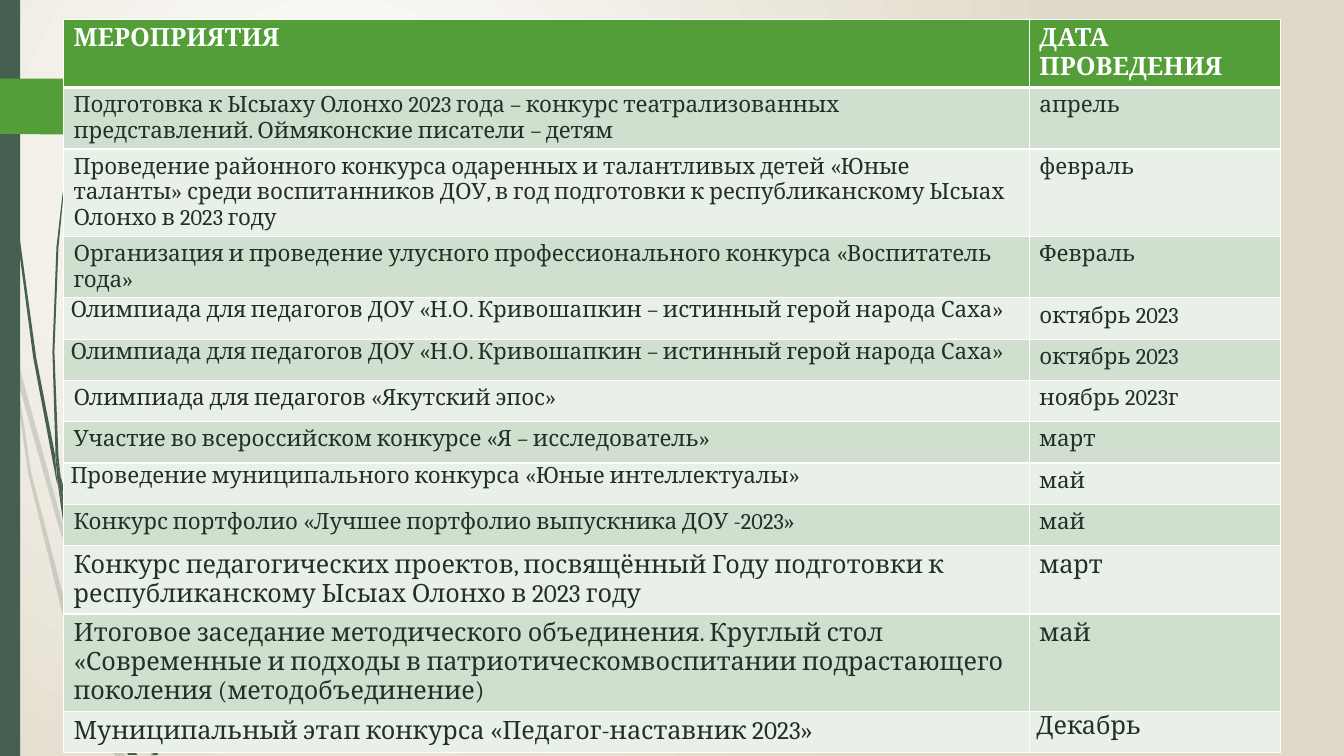
import pptx
import pptx.dml.color
import pptx.enum.text
import pptx.enum.shapes
import pptx.oxml
import pptx.oxml.ns
import pptx.util
from pptx.util import Inches

THEME = {
    "font": "Cambria", "large": 18, "small": 16, "text": "223028",
    "white": "FFFFFF", "sand": "E0D9C8", "pine": "455F51", "green": "549E39",
    "bands": ("D1DFCE", "E9F0E8"), "pale_alpha": 20,
}

HEADINGS = ("МЕРОПРИЯТИЯ", "ДАТА ПРОВЕДЕНИЯ")
EVENTS = [
    ("Подготовка к Ысыаху Олонхо 2023 года – конкурс театрализованных представлений. "
     "Оймяконские писатели – детям", "апрель"),
    ("Проведение районного конкурса одаренных и талантливых детей «Юные таланты» среди "
     "воспитанников ДОУ, в год подготовки к республиканскому Ысыах Олонхо в 2023 году", "февраль"),
    ("Организация и проведение улусного профессионального конкурса «Воспитатель года»", "Февраль"),
    ("Олимпиада для педагогов ДОУ «Н.О. Кривошапкин – истинный герой народа Саха»", "октябрь 2023"),
    ("Олимпиада для педагогов ДОУ «Н.О. Кривошапкин – истинный герой народа Саха»", "октябрь 2023"),
    ("Олимпиада для педагогов «Якутский эпос»", "ноябрь 2023г"),
    ("Участие во всероссийском конкурсе «Я – исследователь»", "март"),
    ("Проведение муниципального конкурса «Юные интеллектуалы»", "май"),
    ("Конкурс портфолио «Лучшее портфолио выпускника ДОУ -2023»", "май"),
    ("Конкурс педагогических проектов, посвящённый Году подготовки к республиканскому "
     "Ысыах Олонхо в 2023 году", "март"),
    ("Итоговое заседание методического объединения. Круглый стол «Современные и подходы в "
     "патриотическомвоспитании подрастающего поколения (методобъединение)", "май"),
    ("Муниципальный этап конкурса «Педагог-наставник 2023»", "Декабрь"),
]
FIRST_LARGE_ROW = 10
TIGHT_CELLS = {(4, 0), (5, 0), (8, 0), (12, 1)}  # justified, with narrow margins

TABLE_LEFT, TABLE_TOP, ROW_HEIGHT = 0.63, 0.19, 0.41
COLUMN_WIDTHS = (9.58, 2.49)

# Outlines of the grass blades, in inches
PALE_GRASS = [
    [(0.11, 3.5), (0.09, 3.22), (0, 2.82), (0, 2.99), (0.1, 3.44)],
    [(0.58, 5.22), (0.84, 5.99), (0.85, 5.86), (0.62, 5.2), (0.14, 3.45), (0.17, 3.76)],
    [(0.92, 6.07), (0.88, 5.96), (0.88, 6.1), (1.23, 6.94), (1.5, 7.5), (1.55, 7.5), (1.27, 6.92)],
    [(1.19, 7.5), (1.24, 7.5), (1.05, 7.11)],
    [(0.93, 6.83), (0.7, 6.19), (0.31, 4.69), (0.17, 3.76), (0.11, 3.5), (0.28, 4.7),
     (0.65, 6.21), (0.92, 6.93), (1.01, 7.14), (0.99, 7.07)],
    [(0.84, 5.99), (0.87, 6.46), (0.93, 6.83), (0.96, 6.92), (1.05, 7.11), (1.03, 7.06),
     (0.91, 6.46), (0.88, 6.1), (0.88, 6.08)],
    [(0.88, 5.84), (1.1, 4.62), (1.6, 3.49), (2.29, 2.45), (2.68, 1.98), (2.9, 1.75),
     (3.12, 1.54), (3.12, 1.53), (2.89, 1.75), (2.68, 1.97), (2.28, 2.44), (1.58, 3.48),
     (1.07, 4.61), (0.85, 5.84), (0.85, 5.86), (0.88, 5.96)],
    [(1.01, 7.14), (1.14, 7.5), (1.19, 7.5)],
    [(0.88, 6.08), (0.88, 6.1), (0.88, 5.96), (0.85, 5.86), (0.84, 5.99)],
    [(0.96, 6.92), (0.93, 6.83), (0.99, 7.07), (1.01, 7.14), (1.19, 7.5), (1.05, 7.11)],
]
DARK_GRASS = [
    [(0.07, 1.1), (0.17, 2.33), (0.33, 3.55), (0.56, 4.77), (0.57, 4.81), (0.55, 4.57),
     (0.55, 4.53), (0.36, 3.55), (0.19, 2.32), (0.08, 1.09), (0.05, 0.48), (0.04, 0),
     (0.03, 0), (0.04, 0.48)],
    [(0.88, 5.92), (1.06, 6.45), (1.06, 6.31), (0.93, 5.9), (0.6, 4.72), (0.64, 5.05)],
    [(1.13, 6.49), (1.1, 6.41), (1.11, 6.56), (1.32, 7.08), (1.52, 7.49), (1.57, 7.49), (1.36, 7.06)],
    [(1.1, 6.91), (0.98, 6.57), (0.72, 5.56), (0.64, 5.05), (0.57, 4.77), (0.68, 5.57),
     (0.93, 6.59), (1.11, 7.08), (1.17, 7.22), (1.16, 7.17)],
    [(0.6, 4.72), (0.58, 4.53), (0.54, 3.49), (0.58, 2.45), (0.63, 1.93), (0.7, 1.41),
     (0.62, 1.93), (0.56, 2.45), (0.52, 3.49), (0.55, 4.49)],
    [(1.33, 7.49), (1.36, 7.49), (1.22, 7.19)],
    [(0.57, 4.77), (0.64, 5.05), (0.6, 4.72), (0.55, 4.49), (0.55, 4.53)],
    [(1.11, 6.33), (1.25, 5.52), (1.58, 4.76), (2.05, 4.06), (2.31, 3.74), (2.45, 3.59),
     (2.61, 3.44), (2.45, 3.58), (2.31, 3.73), (2.04, 4.05), (1.56, 4.74), (1.22, 5.51),
     (1.06, 6.31), (1.1, 6.41)],
    [(1.17, 7.22), (1.27, 7.49), (1.31, 7.49)],
    [(1.06, 6.45), (1.1, 6.91), (1.16, 7.06), (1.22, 7.19), (1.21, 7.16), (1.11, 6.56), (1.09, 6.51)],
    [(1.06, 6.45), (1.09, 6.51), (1.11, 6.56), (1.1, 6.41), (1.06, 6.31)],
    [(1.16, 7.06), (1.1, 6.91), (1.16, 7.17), (1.17, 7.22), (1.3, 7.49), (1.33, 7.49), (1.22, 7.19)],
]
TAG = [(0, 0.78), (1.46, 0.78), (1.48, 0.79), (1.73, 1.04), (1.74, 1.06), (1.73, 1.08),
       (1.48, 1.33), (1.46, 1.34), (0, 1.33)]


def rgb(color):
    return pptx.dml.color.RGBColor.from_string(color)


def add_xml(parent, tag, **attributes):
    child = pptx.oxml.parse_xml(f"<a:{tag} {pptx.oxml.ns.nsdecls('a')}/>")
    for key, value in attributes.items():
        child.set(key, str(value))
    parent.append(child)
    return child


def paint(shape, color, alpha=100):
    shape.shadow.inherit = False
    shape.fill.solid()
    shape.fill.fore_color.rgb = rgb(color)
    shape.line.fill.background()
    if alpha < 100:
        srgb = shape.fill._xPr.find(".//" + pptx.oxml.ns.qn("a:srgbClr"))
        add_xml(srgb, "alpha", val=alpha * 1000)


def add_outline(shapes, outline, color, alpha=100):
    start, *rest = [(Inches(x), Inches(y)) for x, y in outline]
    builder = shapes.build_freeform(*start)
    builder.add_line_segments(rest, close=True)
    paint(builder.convert_to_shape(), color, alpha)


def paint_background(slide):
    """Radial gradient from white near the upper left to sand."""
    fill = slide.background.fill
    fill.gradient()
    for stop, color in zip(fill.gradient_stops, (THEME["white"], THEME["sand"])):
        stop.color.rgb = rgb(color)
    for stop, position in zip(fill.gradient_stops, (0, 1)):
        stop.position = position
    gradient = slide.background._cSld.find(".//" + pptx.oxml.ns.qn("a:gradFill"))
    gradient.remove(gradient.find(pptx.oxml.ns.qn("a:lin")))
    radial = add_xml(gradient, "path", path="circle")
    add_xml(radial, "fillToRect", l=50000, t=50000, r=100000, b=100000)


def set_borders(cell, bottom):
    properties = cell._tc.get_or_add_tcPr()
    for index, (side, width) in enumerate((("L", 1), ("R", 1), ("T", 1), ("B", bottom))):
        line = add_xml(properties, "ln" + side, w=pptx.util.Pt(width))
        add_xml(add_xml(line, "solidFill"), "srgbClr", val=THEME["white"])
        properties.insert(index, line)


def fill_cell(cell, text, row, column):
    header = row == 0
    set_borders(cell, 3 if header else 1)
    cell.fill.solid()
    cell.fill.fore_color.rgb = rgb(THEME["green"] if header else THEME["bands"][(row - 1) % 2])
    cell.text = text
    paragraph = cell.text_frame.paragraphs[0]
    if (row, column) in TIGHT_CELLS:
        cell.margin_left = cell.margin_right = Inches(0.07)
        cell.margin_top = cell.margin_bottom = 0
        paragraph.alignment = pptx.enum.text.PP_ALIGN.JUSTIFY
    font = paragraph.font
    font.name = THEME["font"]
    font.size = pptx.util.Pt(THEME["large" if header or row >= FIRST_LARGE_ROW else "small"])
    font.bold = header
    font.color.rgb = rgb(THEME["white" if header else "text"])


def add_schedule(slide):
    rows = [HEADINGS] + EVENTS
    schedule = slide.shapes.add_table(
        len(rows), len(HEADINGS), Inches(TABLE_LEFT), Inches(TABLE_TOP),
        Inches(sum(COLUMN_WIDTHS)), Inches(ROW_HEIGHT * len(rows))).table
    for column, width in zip(schedule.columns, COLUMN_WIDTHS):
        column.width = Inches(width)
    for row, texts in enumerate(rows):
        schedule.rows[row].height = Inches(ROW_HEIGHT)
        for column, text in enumerate(texts):
            fill_cell(schedule.cell(row, column), text, row, column)


def main():
    deck = pptx.Presentation()
    deck.slide_width, deck.slide_height = Inches(13.33), Inches(7.5)
    slide = deck.slides.add_slide(deck.slide_layouts[6])
    paint_background(slide)
    for blades, alpha in ((PALE_GRASS, THEME["pale_alpha"]), (DARK_GRASS, 100)):
        grass = slide.shapes.add_group_shape()
        for blade in blades:
            add_outline(grass.shapes, blade, THEME["pine"], alpha)
    stripe = slide.shapes.add_shape(
        pptx.enum.shapes.MSO_SHAPE.RECTANGLE, 0, 0, Inches(0.2), deck.slide_height)
    paint(stripe, THEME["pine"])
    add_outline(slide.shapes, TAG, THEME["green"])
    add_schedule(slide)
    deck.save("out.pptx")


if __name__ == "__main__":
    main()
